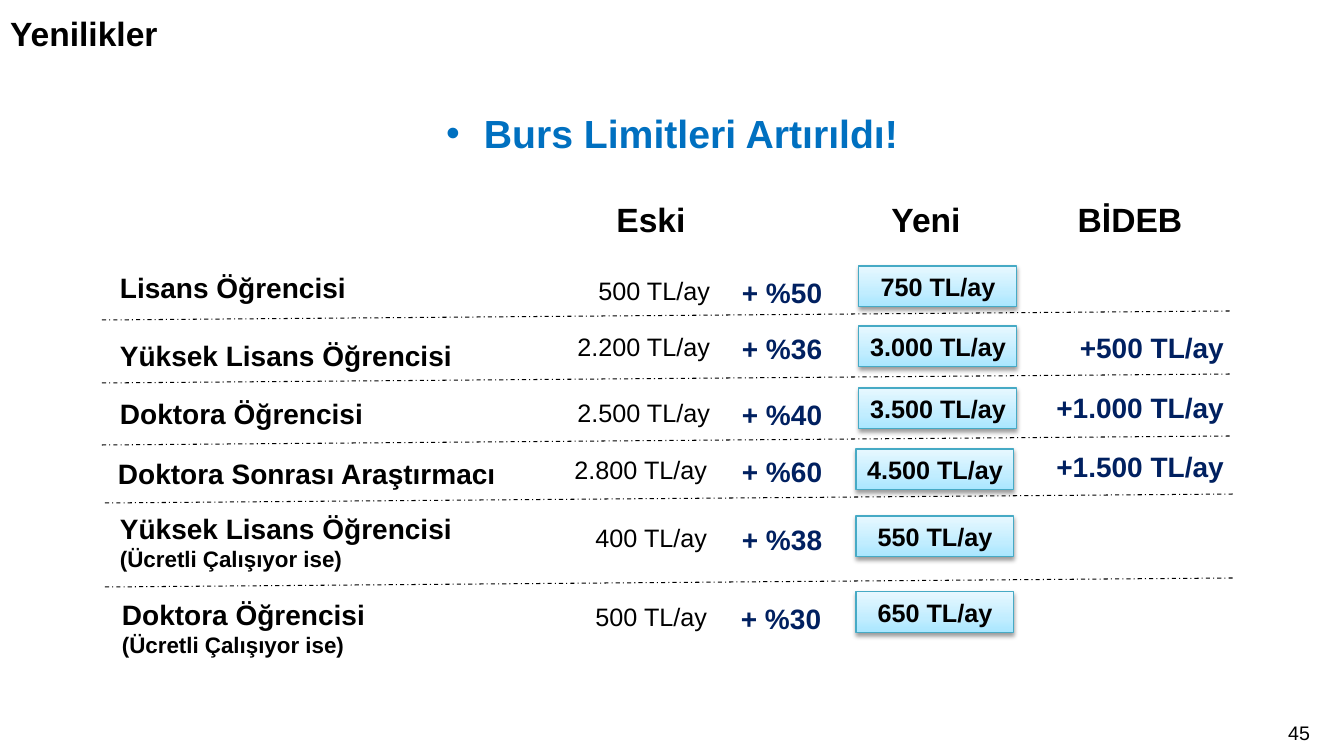
from copy import deepcopy

from lxml import etree
from pptx import Presentation
from pptx.dml.color import RGBColor
from pptx.enum.dml import MSO_LINE
from pptx.enum.shapes import MSO_CONNECTOR, MSO_SHAPE
from pptx.enum.text import MSO_ANCHOR, MSO_AUTO_SIZE, PP_ALIGN
from pptx.oxml.ns import qn
from pptx.util import Emu, Pt

LEFT, MID, RIGHT = PP_ALIGN.LEFT, PP_ALIGN.CENTER, PP_ALIGN.RIGHT
TOP, MIDDLE = MSO_ANCHOR.TOP, MSO_ANCHOR.MIDDLE
NO_FIT = MSO_AUTO_SIZE.NONE
DASH_DOT = MSO_LINE.DASH_DOT
RECT, STRAIGHT = MSO_SHAPE.RECTANGLE, MSO_CONNECTOR.STRAIGHT

SCALE = 914400 / 100.8
BLACK, NAVY, BLUE, TEAL = "000000", "002060", "0070C0", "46AAC5"
STOPS = [(0, "A7E6FF"), (0.35, "C1EDFF"), (1, "E7F8FF")]
NOTE = "(Ücretli Çalışıyor ise)"

# Row: top, shift of amounts, then (text, x, y) of name, rate, new and bonus;
# x and y are offsets inside the row
ROWS = [
    (270, 0, ["Lisans Öğrencisi"], (110, -4), "500 TL/ay", ("+ %50", 732),
     ("750 TL/ay", -4), None),
    (326, 0, ["Yüksek Lisans Öğrencisi"], (110, 8), "2.200 TL/ay", ("+ %36", 732),
     ("3.000 TL/ay", 0), ("+500 TL/ay", 0)),
    (392, 0, ["Doktora Öğrencisi"], (110, 0), "2.500 TL/ay", ("+ %40", 732),
     ("3.500 TL/ay", -4), ("+1.000 TL/ay", -6)),
    (449, -3, ["Doktora Sonrası Araştırmacı"], (108, 3), "2.800 TL/ay", ("+ %60", 732),
     ("4.500 TL/ay", 0), ("+1.500 TL/ay", -4)),
    (517, -3, ["Yüksek Lisans Öğrencisi", NOTE], (110, -10), "400 TL/ay", ("+ %38", 732),
     ("550 TL/ay", -1), None),
    (596, -3, ["Doktora Öğrencisi", NOTE], (112, -3), "500 TL/ay", ("+ %30", 731),
     ("650 TL/ay", -4), None),
]
RULES = [(102, 320), (102, 383), (102, 445), (105, 503), (105, 587)]
HEADS = [("Eski", 551), ("Yeni", 826), ("BİDEB", 1030)]


def px(n):
    return Emu(round(n * SCALE))


def rgb(code):
    return RGBColor.from_string(code)


def write(shape, lines, size, color=BLACK, bold=True, align=LEFT, anchor=TOP):
    """Fill a shape with lines; every line after the first is a smaller note."""
    frame = shape.text_frame
    frame.text = "\n".join(lines)
    frame.word_wrap = True
    frame.auto_size = NO_FIT
    frame.vertical_anchor = anchor
    for i, para in enumerate(frame.paragraphs):
        para.alignment = align
        para.space_before = Pt(0)
        for run in para.runs:
            font = run.font
            font.name, font.bold = "Arial", bold
            font.size = Pt(size if i == 0 else 16)
            font.color.rgb = rgb(color)


def label(slide, box, lines, size, **style):
    write(slide.shapes.add_textbox(*map(px, box)), lines, size, **style)


def place(shape, box):
    shape.left, shape.top, shape.width, shape.height = map(px, box)


def badge(slide, box, text):
    shape = slide.shapes.add_shape(RECT, *map(px, box))
    shape.line.color.rgb = rgb(TEAL)
    shape.line.width = Pt(0.75)

    # Three-stop gradient, rising from the bottom edge
    fill = shape.fill
    fill.gradient()
    fill.gradient_angle = 90
    props = shape._element.spPr
    stops = props.find(".//" + qn("a:gsLst"))
    stops.insert(1, deepcopy(stops[0]))
    for stop, (pos, color) in zip(fill.gradient_stops, STOPS):
        stop.position = pos
        stop.color.rgb = rgb(color)

    # Soft shadow below
    shape.shadow.inherit = False
    glow = etree.SubElement(props.find(qn("a:effectLst")), qn("a:outerShdw"),
                            blurRad="40000", dist="20000", dir="5400000", rotWithShape="0")
    tint = etree.SubElement(glow, qn("a:srgbClr"), val=BLACK)
    etree.SubElement(tint, qn("a:alpha"), val="38000")
    write(shape, [text], 18, align=MID)


def rule(slide, x, y):
    line = slide.shapes.add_connector(STRAIGHT, px(x), px(y), px(x + 1129), px(y - 9))
    line.line.color.rgb = rgb(BLACK)
    line.line.width = Pt(0.75)
    line.line.dash_style = DASH_DOT
    etree.SubElement(line._element.spPr, qn("a:effectLst"))


def add_row(slide, top, shift, name, spot, old, rate, new, bonus):
    x, dy = spot
    label(slide, (x, top + dy, 460, 44 if len(name) == 1 else 72), name, 20)
    label(slide, (520 + shift, top, 200, 40), [old], 18, bold=False, align=RIGHT)
    label(slide, (rate[1], top + 1, 107, 44), [rate[0]], 20, color=NAVY)
    badge(slide, (859 + shift, top + new[1], 158, 41), new[0])
    if bonus:
        label(slide, (1034, top + bonus[1], 200, 44), [bonus[0]], 20,
              color=NAVY, align=RIGHT)


def add_heads(slide):
    title, body = slide.placeholders
    place(title, (0, 0, 1146, 67))
    write(title, ["Yenilikler"], 24, anchor=MIDDLE)

    place(body, (105, 104, 1134, 67))
    body.text_frame.text = ""
    props = body.text_frame.paragraphs[0]._p.get_or_add_pPr()
    props.set("marL", "0")
    props.set("indent", "0")
    etree.SubElement(props, qn("a:buNone"))
    write(body, ["Burs Limitleri Artırıldı!"], 28, color=BLUE, align=MID)


def add_grid(slide):
    for text, x in HEADS:
        label(slide, (x, 194, 200, 50), [text], 24, align=MID)
    for spot in RULES:
        rule(slide, *spot)
    for row in ROWS:
        add_row(slide, *row)


def main():
    deck = Presentation()
    deck.slide_width, deck.slide_height = px(1344), px(756)
    slide = deck.slides.add_slide(deck.slide_layouts[1])
    add_heads(slide)
    add_grid(slide)
    # Page number
    label(slide, (1044, 716, 276, 40), ["45"], 14, bold=False, align=RIGHT)
    deck.save("out.pptx")


if __name__ == "__main__":
    main()
